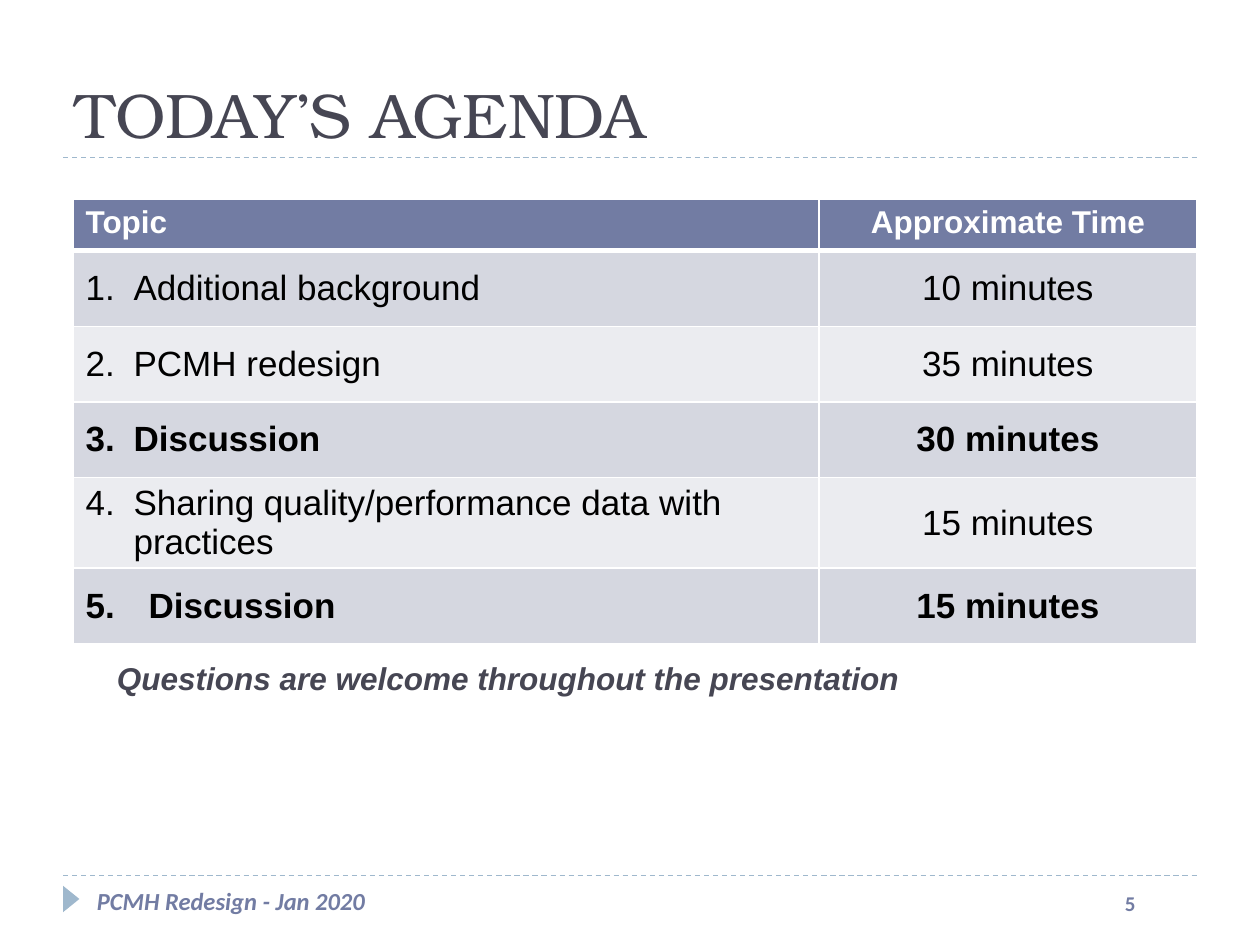
from dataclasses import dataclass, field

from lxml.etree import SubElement
from pptx import Presentation
from pptx.dml.color import RGBColor
from pptx.enum.dml import MSO_LINE
from pptx.enum.shapes import MSO_CONNECTOR, MSO_SHAPE
from pptx.enum.text import MSO_ANCHOR as Anchor, PP_ALIGN as Align
from pptx.oxml import parse_xml
from pptx.oxml.ns import nsdecls, qn
from pptx.util import Inches, Pt

WIDTH, HEIGHT = 10, 7.5
MARGIN = 0.05 * WIDTH
INK, ACCENT, PALE = "464653", "727CA3", "9FB8CD"
WHITE, BLACK = "FFFFFF", "000000"
BANDS = ("D5D7E0", "EBECF0")


@dataclass
class Label:
    text: str
    box: tuple[float, float, float, float]
    font: dict
    color: str
    anchor: Anchor = Anchor.TOP


@dataclass
class Topic:
    name: str
    minutes: int
    bold: bool = False
    indent: float = 0.38


@dataclass
class Cell:
    text: str
    fill: str
    color: str
    font: dict = field(default_factory=dict)
    align: Align = Align.LEFT
    anchor: Anchor = Anchor.MIDDLE
    bottom: float = 1


LABELS = [
    Label("5", (8.83, 7.02, 0.58, 0.4),
          dict(name="Calibri", size=Pt(12), bold=True), ACCENT),
    Label("PCMH Redesign - Jan 2020", (0.67, 6.98, 4.5, 0.52),
          dict(name="Calibri", size=Pt(14), bold=True, italic=True), ACCENT),
    Label("TODAY’S AGENDA", (MARGIN, 0.17, WIDTH - 2 * MARGIN, 1.08),
          dict(name="TeX Gyre Bonum", size=Pt(36)), INK, Anchor.BOTTOM),
    Label("Questions are welcome throughout the presentation", (0.83, 5.18, 6.45, 0.4),
          dict(name="Arial", size=Pt(18), bold=True, italic=True), INK),
]
TOPICS = [
    Topic("Additional background", 10),
    Topic("PCMH redesign", 35),
    Topic("Discussion", 30, bold=True),
    Topic("Sharing quality/performance data with practices", 15),
    Topic("Discussion", 15, bold=True, indent=0.5),
]
COLUMNS = (5.92, 3)
HEADER_HEIGHT, ROW_HEIGHT = 0.41, 0.6


def rgb(color: str) -> RGBColor:
    return RGBColor.from_string(color)


def write(p, text: str, font: dict, color: str) -> None:
    r = p.add_run()
    r.text = text
    for name, value in font.items():
        setattr(r.font, name, value)
    r.font.color.rgb = rgb(color)


def add_label(s, label: Label) -> None:
    tf = s.shapes.add_textbox(*map(Inches, label.box)).text_frame
    tf.word_wrap = True
    tf.vertical_anchor = label.anchor
    write(tf.paragraphs[0], label.text, label.font, label.color)


def add_rule(s, y: float) -> None:
    ends = map(Inches, (MARGIN, y, WIDTH - MARGIN, y))
    line = s.shapes.add_connector(MSO_CONNECTOR.STRAIGHT, *ends)
    line.line.color.rgb = rgb(PALE)
    line.line.width = Pt(0.75)
    line.line.dash_style = MSO_LINE.DASH
    SubElement(line._element.spPr, qn("a:effectLst"))


def add_marker(s) -> None:
    sp = s.shapes.add_shape(MSO_SHAPE.ISOSCELES_TRIANGLE,
                            *map(Inches, (0.46, 7.07, 0.21, 0.13)))
    sp.rotation = 90
    sp.shadow.inherit = False
    sp.fill.solid()
    sp.fill.fore_color.rgb = rgb(PALE)
    sp.line.fill.background()


def set_borders(cell, bottom: float) -> None:
    """Outline the cell in white; border elements must precede its fill."""
    tc_pr = cell._tc.get_or_add_tcPr()
    for i, (side, width) in enumerate(zip("LRTB", (1, 1, 1, bottom))):
        tc_pr.insert(i, parse_xml(
            f'<a:ln{side} {nsdecls("a")} w="{Pt(width)}"><a:solidFill>'
            f'<a:srgbClr val="{WHITE}"/></a:solidFill></a:ln{side}>'))


def set_number(p, start: int, indent: float) -> None:
    p_pr = p._p.get_or_add_pPr()
    p_pr.set("marL", str(Inches(indent)))
    p_pr.set("indent", str(-Inches(indent)))
    SubElement(p_pr, qn("a:buFont"), typeface="+mj-lt")
    SubElement(p_pr, qn("a:buAutoNum"), type="arabicPeriod", startAt=str(start))


def fill_cell(cell, content: Cell) -> None:
    cell.fill.solid()
    cell.fill.fore_color.rgb = rgb(content.fill)
    cell.vertical_anchor = content.anchor
    set_borders(cell, content.bottom)
    p = cell.text_frame.paragraphs[0]
    p.alignment = content.align
    write(p, content.text, content.font, content.color)


def add_agenda(s) -> None:
    height = HEADER_HEIGHT + ROW_HEIGHT * len(TOPICS)
    box = map(Inches, (0.58, 1.58, sum(COLUMNS), height))
    table = s.shapes.add_table(len(TOPICS) + 1, len(COLUMNS), *box).table
    for column, width in zip(table.columns, COLUMNS):
        column.width = Inches(width)
    for i, row in enumerate(table.rows):
        row.height = Inches(ROW_HEIGHT if i else HEADER_HEIGHT)

    aligns = (Align.LEFT, Align.CENTER)
    header_font = dict(name="Arial", size=Pt(18), bold=True)
    for col, text in enumerate(("Topic", "Approximate Time")):
        fill_cell(table.cell(0, col), Cell(text, ACCENT, WHITE, header_font,
                                           aligns[col], Anchor.TOP, bottom=3))
    for row, topic in enumerate(TOPICS, 1):
        font = dict(name="Arial", size=Pt(20), bold=topic.bold)
        band = BANDS[(row - 1) % 2]
        for col, text in enumerate((topic.name, f"{topic.minutes} minutes")):
            fill_cell(table.cell(row, col), Cell(text, band, BLACK, font, aligns[col]))
        set_number(table.cell(row, 0).text_frame.paragraphs[0], row, topic.indent)


def main() -> None:
    prs = Presentation()
    prs.slide_width, prs.slide_height = Inches(WIDTH), Inches(HEIGHT)
    s = prs.slides.add_slide(prs.slide_layouts[6])
    for y in (6.95, 1.25):
        add_rule(s, y)
    add_marker(s)
    add_agenda(s)
    for label in LABELS:
        add_label(s, label)
    prs.save("out.pptx")


if __name__ == "__main__":
    main()
